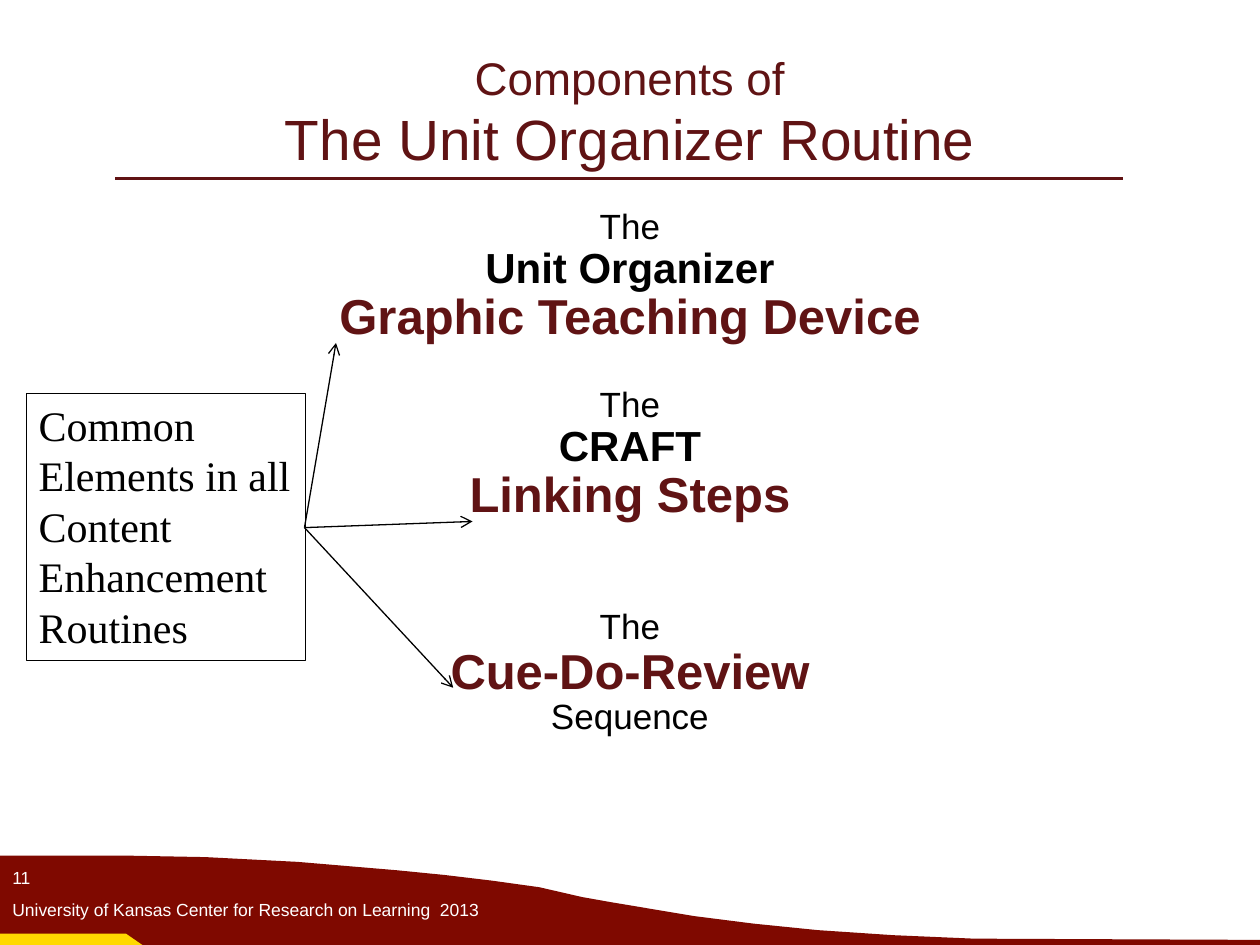
import pptx
import pptx.dml.color
import pptx.enum.shapes
import pptx.enum.text
import pptx.oxml.ns
import pptx.util
from lxml import etree

Pt = pptx.util.Pt
ALIGN = pptx.enum.text.PP_ALIGN
ANCHOR = pptx.enum.text.MSO_ANCHOR
MAROON = "601314"
BLACK = "000000"
WHITE = "FFFFFF"


def color(value):
    return pptx.dml.color.RGBColor.from_string(value)


def write_text(paragraph, text, size=20, font="Arial", fill=BLACK, bold=False,
               align=ALIGN.LEFT, spacing=None, before=None):
    paragraph.alignment = align
    if spacing is not None:
        paragraph.line_spacing = spacing
    if before is not None:
        paragraph.space_before = Pt(before)
    run = paragraph.add_run()
    run.text = text
    run.font.name = font
    run.font.size = Pt(size)
    run.font.bold = bold
    run.font.color.rgb = color(fill)


class SlideBuilder:
    def __init__(self, slide):
        self.slide = slide

    def text_box(self, left, top, width, height, anchor=ANCHOR.TOP):
        shape = self.slide.shapes.add_textbox(Pt(left), Pt(top), Pt(width), Pt(height))
        shape.text_frame.word_wrap = True
        shape.text_frame.vertical_anchor = anchor
        return shape.text_frame

    def outlined_box(self, left, top, width, height):
        shape = self.slide.shapes.add_shape(
            pptx.enum.shapes.MSO_SHAPE.RECTANGLE, Pt(left), Pt(top), Pt(width), Pt(height))
        shape.shadow.inherit = False
        shape.fill.background()
        shape.line.color.rgb = color(BLACK)
        shape.line.width = Pt(0.75)
        shape.text_frame.word_wrap = True
        shape.text_frame.vertical_anchor = ANCHOR.TOP
        return shape.text_frame

    def polygon(self, points, fill):
        start, *rest = [(Pt(x), Pt(y)) for x, y in points]
        builder = self.slide.shapes.build_freeform(*start, scale=1.0)
        builder.add_line_segments(rest, close=True)
        shape = builder.convert_to_shape()
        shape.shadow.inherit = False
        shape.fill.solid()
        shape.fill.fore_color.rgb = color(fill)
        shape.line.fill.background()

    def line(self, start, end, stroke=BLACK, width=0.75, arrow=False):
        connector = self.slide.shapes.add_connector(
            pptx.enum.shapes.MSO_CONNECTOR.STRAIGHT, *map(Pt, start + end))
        connector.line.color.rgb = color(stroke)
        connector.line.width = Pt(width)
        if arrow:
            outline = connector.line._get_or_add_ln()
            etree.SubElement(outline, pptx.oxml.ns.qn("a:tailEnd"), type="arrow")
        etree.SubElement(connector._element.spPr, pptx.oxml.ns.qn("a:effectLst"))


def main():
    presentation = pptx.Presentation()
    presentation.slide_width = Pt(720)
    presentation.slide_height = Pt(540)
    slide = presentation.slides.add_slide(presentation.slide_layouts[6])
    builder = SlideBuilder(slide)

    wave = [(720, 540), (0, 540), (0, 488.9), (70.6, 488.9), (117.4, 489.8),
            (170, 492.5), (226.8, 497.3), (254, 500), (280.8, 503.2), (308.2, 507),
            (332.6, 512.6), (350, 515.7), (396.7, 523.5), (430.6, 527.8),
            (467.3, 531.5), (510.5, 534.4), (556.6, 536.4), (720, 537.1)]
    builder.polygon(wave, "7F0900")
    builder.polygon([(0, 533.5), (72, 533.5), (81.4, 540), (0, 540)], "FFD900")
    builder.line((66, 102), (642, 102), MAROON, 1.5)

    footer = [("11", 492, 150, 24),
              ("University of Kansas Center for Research on Learning  2013", 510, 300, 18)]
    for text, top, width, height in footer:
        frame = builder.text_box(0, top, width, height)
        write_text(frame.paragraphs[0], text, size=10, fill=WHITE)

    title = builder.text_box(54, 36, 612, 66, ANCHOR.BOTTOM).paragraphs[0]
    write_text(title, "Components of", size=26.1, fill=MAROON, align=ALIGN.CENTER)
    title.add_line_break()
    write_text(title, "The Unit Organizer Routine", size=32.4, fill=MAROON,
               align=ALIGN.CENTER)

    plain = dict(size=20)
    strong = dict(size=24, bold=True)
    accent = dict(size=28, bold=True, fill=MAROON)
    group_gap = 24.8
    components = [
        ("The", plain, 0), ("Unit Organizer", strong, 0),
        ("Graphic Teaching Device", accent, 0),
        ("The", plain, group_gap), ("CRAFT", strong, 0), ("Linking Steps", accent, 0),
        ("The", plain, 2 * group_gap), ("Cue-Do-Review", accent, 0),
        ("Sequence", plain, 0),
    ]
    body = builder.text_box(54, 120, 612, 312)
    for index, (text, style, gap) in enumerate(components):
        paragraph = body.add_paragraph() if index else body.paragraphs[0]
        before = round(0.23 * style["size"] + gap, 1) if index else None
        write_text(paragraph, text, align=ALIGN.CENTER, spacing=0.7, before=before, **style)

    common = builder.outlined_box(15, 224.8, 159.5, 152.5)
    write_text(common.paragraphs[0], "Common Elements in all Content Enhancement Routines",
               size=24, font="Times New Roman", spacing=Pt(28.8))
    for target in [(192, 196), (270, 298), (259, 393)]:
        builder.line((174, 301.5), target, arrow=True)

    presentation.save("out.pptx")


if __name__ == "__main__":
    main()
